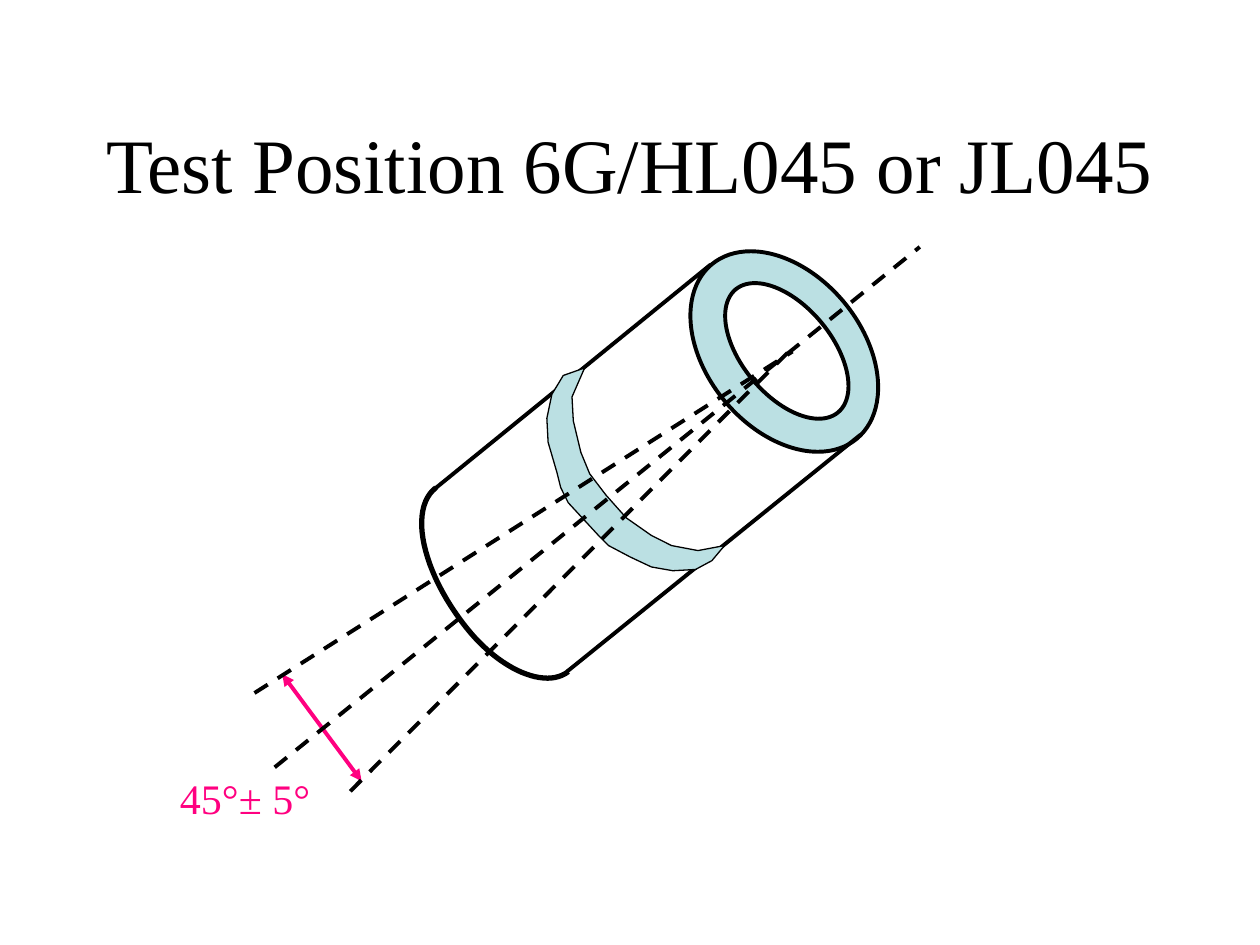
import dataclasses

import pptx
import pptx.dml.color
import pptx.enum.dml
import pptx.enum.shapes
import pptx.enum.text
import pptx.oxml.xmlchemy
import pptx.util
from pptx.util import Inches


@dataclasses.dataclass(frozen=True)
class Theme:
    font: str = "Times New Roman"
    ink: str = "000000"
    paper: str = "FFFFFF"
    metal: str = "BBE0E3"
    accent: str = "FF0080"
    title_size: float = 44
    label_size: float = 24
    hairline: float = 0.75
    stroke: float = 2.25
    heavy: float = 3


class SlideBuilder:
    """Draw styled elements on the current slide."""

    def __init__(self, prs, theme):
        self.theme = theme
        self.s = prs.slides.add_slide(prs.slide_layouts[5])

    def color(self, value):
        return pptx.dml.color.RGBColor.from_string(value)

    def fill(self, sp, color):
        if color is None:
            sp.fill.background()
        else:
            sp.fill.solid()
            sp.fill.fore_color.rgb = self.color(color)

    def outline(self, sp, width, color=None):
        sp.line.color.rgb = self.color(color or self.theme.ink)
        sp.line.width = pptx.util.Pt(width)

    def set_text(self, sp, text, size, color, align, anchor):
        tf = sp.text_frame
        tf.word_wrap = True
        tf.vertical_anchor = anchor
        p = tf.paragraphs[0]
        p.text = text
        p.alignment = align
        p.font.name = self.theme.font
        p.font.size = pptx.util.Pt(size)
        p.font.color.rgb = self.color(color)

    def title(self, text, x, y, w, h):
        sp = self.s.shapes.title
        sp.left, sp.top, sp.width, sp.height = map(Inches, (x, y, w, h))
        self.set_text(sp, text, self.theme.title_size, self.theme.ink,
                      pptx.enum.text.PP_ALIGN.CENTER, pptx.enum.text.MSO_ANCHOR.MIDDLE)

    def label(self, text, x, y, w, h):
        sp = self.s.shapes.add_textbox(*map(Inches, (x, y, w, h)))
        self.fill(sp, self.theme.paper)
        self.set_text(sp, text, self.theme.label_size, self.theme.accent,
                      pptx.enum.text.PP_ALIGN.LEFT, pptx.enum.text.MSO_ANCHOR.TOP)

    def ellipse(self, x, y, w, h, rotation, fill):
        sp = self.s.shapes.add_shape(
            pptx.enum.shapes.MSO_SHAPE.OVAL, *map(Inches, (x, y, w, h)))
        sp.rotation = rotation
        sp.shadow.inherit = False
        self.fill(sp, fill)
        self.outline(sp, self.theme.stroke)

    def line(self, start, end, color=None, dashed=False, arrows=False):
        sp = self.s.shapes.add_connector(
            pptx.enum.shapes.MSO_CONNECTOR.STRAIGHT, *map(Inches, (*start, *end)))
        self.outline(sp, self.theme.stroke, color)
        if dashed:
            sp.line.dash_style = pptx.enum.dml.MSO_LINE.DASH
        if arrows:
            for tag in ("a:headEnd", "a:tailEnd"):
                arrowhead = pptx.oxml.xmlchemy.OxmlElement(tag)
                arrowhead.set("type", "triangle")
                sp.get_or_add_ln().append(arrowhead)
        sp._element.spPr.append(pptx.oxml.xmlchemy.OxmlElement("a:effectLst"))

    def freeform(self, points, width, fill=None, close=False):
        points = [tuple(map(Inches, point)) for point in points]
        builder = self.s.shapes.build_freeform(*points[0])
        builder.add_line_segments(points[1:], close=close)
        sp = builder.convert_to_shape()
        sp.shadow.inherit = False
        self.fill(sp, fill)
        self.outline(sp, width)

    def curve(self, start, segments, steps=24):
        points = [start]
        for b, c, d in segments:
            a = points[-1]
            for i in range(1, steps + 1):
                t = i / steps
                weights = ((1 - t) ** 3, 3 * t * (1 - t) ** 2, 3 * t * t * (1 - t), t ** 3)
                points.append(tuple(
                    sum(k * v for k, v in zip(weights, axis)) for axis in zip(a, b, c, d)))
        self.freeform(points, self.theme.heavy)


WELD = [
    (4.64, 2.92), (4.47, 2.98), (4.38, 3.13), (4.34, 3.32), (4.35, 3.51),
    (4.42, 3.75), (4.45, 3.87), (4.51, 3.99), (4.75, 4.25), (4.83, 4.33),
    (5, 4.42), (5.17, 4.5), (5.34, 4.53), (5.52, 4.52), (5.65, 4.45),
    (5.75, 4.33), (5.54, 4.37), (5.33, 4.33), (5.17, 4.25), (4.97, 4.11),
    (4.81, 3.93), (4.68, 3.76), (4.61, 3.59), (4.55, 3.34), (4.54, 3.15),
]
PIPE_END = [
    ((3.24, 4.04), (3.35, 4.54), (3.7, 4.98)),
    ((3.97, 5.32), (4.33, 5.47), (4.51, 5.33)),
]
PIPE_SIDES = [((3.45, 3.88), (5.64, 2.1)), ((4.5, 5.33), (6.83, 3.45))]
AXES = [
    ((2.18, 6.09), (7.3, 1.96)),
    ((2.78, 6.28), (6.3, 2.75)),
    ((2.02, 5.5), (6.29, 2.79)),
]


def main():
    theme = Theme()
    prs = pptx.Presentation()
    prs.slide_width, prs.slide_height = Inches(10), Inches(7.5)
    slide = SlideBuilder(prs, theme)
    slide.title("Test Position 6G/HL045 or JL045", 0.5, 0.67, 9, 1.25)
    slide.line((2.24, 5.35), (2.87, 6.2), theme.accent, arrows=True)
    slide.label("45°± 5°", 1.33, 6.08, 1.42, 0.5)
    slide.ellipse(5.61, 1.89, 1.23, 1.8, 320.2, theme.metal)
    slide.ellipse(5.89, 2.15, 0.71, 1.27, 320.2, theme.paper)
    slide.curve((3.46, 3.87), PIPE_END)
    for start, end in PIPE_SIDES:
        slide.line(start, end)
    slide.freeform(WELD, theme.hairline, theme.metal, close=True)
    for start, end in AXES:
        slide.line(start, end, dashed=True)
    prs.save("out.pptx")


if __name__ == "__main__":
    main()
